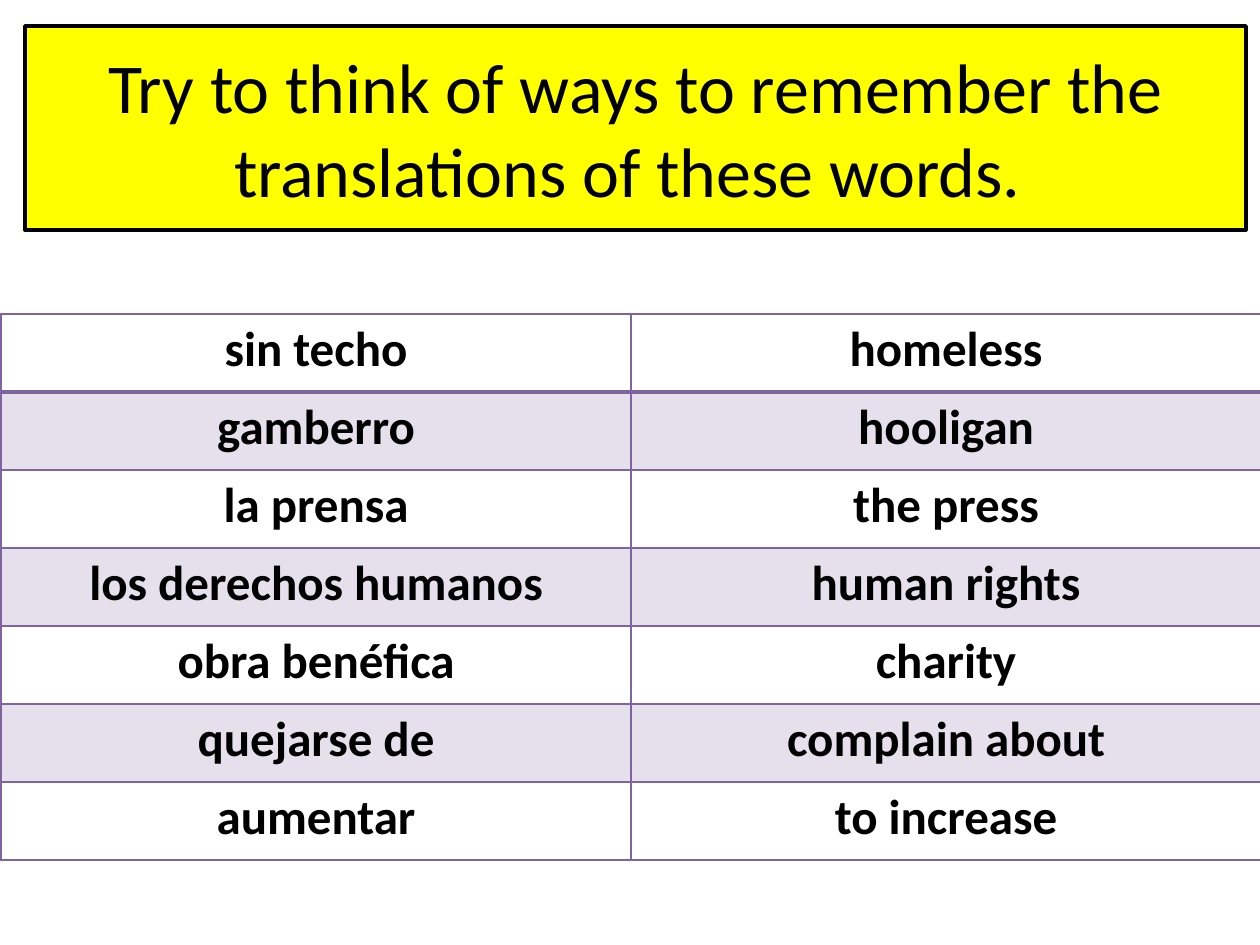
"""Build a Spanish-English vocabulary slide with a title box and a word table."""
import pptx
import pptx.dml.color
import pptx.enum.shapes
import pptx.enum.text
import pptx.oxml
import pptx.oxml.ns
import pptx.util

RGBColor = pptx.dml.color.RGBColor
BLACK = RGBColor(0x00, 0x00, 0x00)
YELLOW = RGBColor(0xFF, 0xFF, 0x00)
PURPLE = RGBColor(0x80, 0x64, 0xA2)

FONT = "Calibri"
HEADING = "Try to think of ways to remember the translations of these words. "
VOCABULARY = [
    ("sin techo", "homeless"),
    ("gamberro", "hooligan"),
    ("la prensa", "the press"),
    ("los derechos humanos", "human rights"),
    ("obra benéfica", "charity"),
    ("quejarse de", "complain about"),
    ("aumentar", "to increase"),
]

HEADING_BOX = (25, 26, 1221, 204)
TABLE_LEFT, TABLE_TOP = 1, 314
COLUMN_WIDTH, ROW_HEIGHT = 630, 78
BAND_OPACITY = 20


def px(length):
    return pptx.util.Emu(round(length * 914400 / 126))


def write(frame, text, size, bold=False):
    paragraph = frame.paragraphs[0]
    paragraph.alignment = pptx.enum.text.PP_ALIGN.CENTER
    run = paragraph.add_run()
    run.text = text
    run.font.name = FONT
    run.font.size = pptx.util.Pt(size)
    run.font.bold = bold
    run.font.color.rgb = BLACK


def add_borders(cell, widths):
    properties = cell._tc.get_or_add_tcPr()
    for side, width in widths.items():
        properties.append(pptx.oxml.parse_xml(
            f'<a:ln{side} {pptx.oxml.ns.nsdecls("a")} w="{pptx.util.Pt(width)}">'
            f'<a:solidFill><a:srgbClr val="{PURPLE}"/></a:solidFill></a:ln{side}>'))


def shade(cell):
    cell.fill.solid()
    cell.fill.fore_color.rgb = PURPLE
    color = cell._tc.tcPr.find("a:solidFill/a:srgbClr", pptx.oxml.ns._nsmap)
    color.append(pptx.oxml.parse_xml(
        f'<a:alpha {pptx.oxml.ns.nsdecls("a")} val="{BAND_OPACITY * 1000}"/>'))


def add_heading(slide):
    heading = slide.shapes.add_shape(
        pptx.enum.shapes.MSO_SHAPE.ROUNDED_RECTANGLE, *map(px, HEADING_BOX))
    heading.adjustments[0] = 0
    heading.shadow.inherit = False
    heading.fill.solid()
    heading.fill.fore_color.rgb = YELLOW
    heading.line.color.rgb = BLACK
    heading.line.width = pptx.util.Pt(2)
    heading.text_frame.word_wrap = True
    heading.text_frame.vertical_anchor = pptx.enum.text.MSO_ANCHOR.MIDDLE
    write(heading.text_frame, HEADING, 40)


def add_vocabulary(slide):
    rows, columns = len(VOCABULARY), len(VOCABULARY[0])
    table = slide.shapes.add_table(
        rows, columns, px(TABLE_LEFT), px(TABLE_TOP),
        px(columns * COLUMN_WIDTH), px(rows * ROW_HEIGHT)).table
    table.first_row = False
    table.horz_banding = False
    for column in table.columns:
        column.width = px(COLUMN_WIDTH)
    for r, words in enumerate(VOCABULARY):
        table.rows[r].height = px(ROW_HEIGHT)
        for c, word in enumerate(words):
            cell = table.cell(r, c)
            write(cell.text_frame, word, 28, bold=True)
            add_borders(cell, {"L": 1, "R": 1, "T": 2 if r == 1 else 1,
                               "B": 2 if r == 0 else 1})
            if r % 2:
                shade(cell)
            else:
                cell.fill.background()


def main():
    deck = pptx.Presentation()
    deck.slide_width, deck.slide_height = px(1260), px(945)
    slide = deck.slides.add_slide(deck.slide_layouts[6])
    add_heading(slide)
    add_vocabulary(slide)
    deck.save("out.pptx")


if __name__ == "__main__":
    main()
